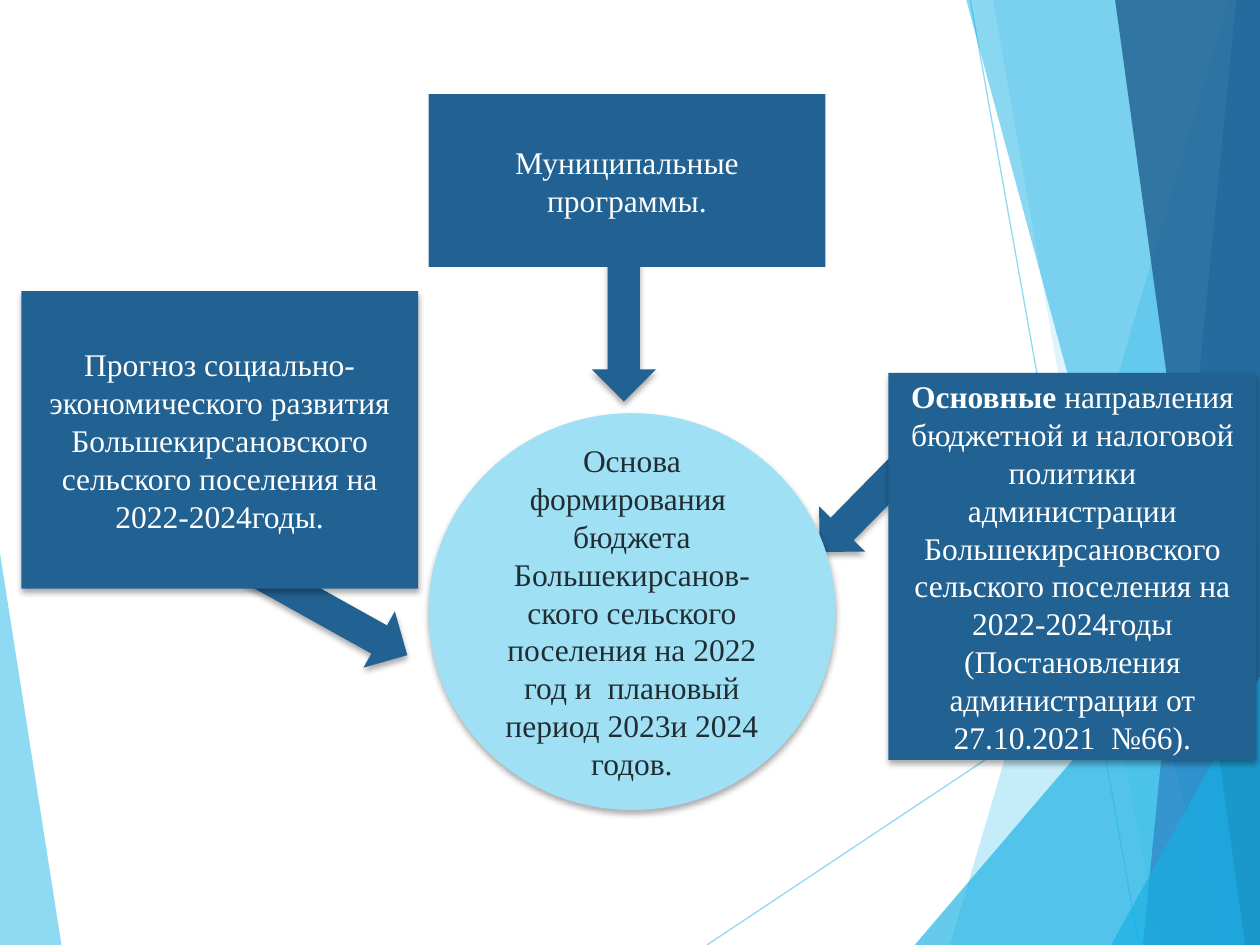
from lxml.etree import SubElement
from pptx import Presentation
from pptx.dml.color import RGBColor
from pptx.enum.shapes import MSO_CONNECTOR, MSO_SHAPE
from pptx.enum.text import MSO_ANCHOR, PP_ALIGN
from pptx.oxml.ns import qn
from pptx.util import Cm, Pt

WIDE, HIGH = 25.4, 19.05
HUES = {
    "sky": "5FCBEF", "cyan": "17B0E4", "blue": "2E83C3", "navy": "226292",
    "pale": "9FE0F5", "ink": "212D32", "white": "FFFFFF", "black": "000000",
}
FONT = {"name": "Times New Roman", "size": Pt(18)}
FRAME = {"word_wrap": True, "vertical_anchor": MSO_ANCHOR.MIDDLE}

WEDGE = ("sky", 70, [(0, 11.15), (1.24, HIGH), (0, HIGH)])
RAYS = [
    ((14.25, HIGH), (WIDE, 11.63)),
    ((19.56, 0), (22.96, HIGH)),
]
BANDS = [
    ("sky", 36, 24.77, 19.15, 0),
    ("sky", 20, 20.02, 23.34, 0),
    ("cyan", 66, WIDE, 18.44, 10.9),
    ("cyan", 50, 19.48, 24.64, 0),
    ("blue", 70, 24.92, 23.04, 0),
    ("navy", 82, 22.48, 25.1, 0),
    ("cyan", 66, WIDE, 22.4, 13.64),
]
ARROWS = [(4.83, 11.68, 29.1), (15.98, 9.19, 134.5), (10.77, 5.64, 90)]
CORE = [[("Основа формирования  бюджета Большекирсанов-ского сельского поселения "
          "на 2022 год и  плановый период 2023и 2024 годов.", False)]]
PLANS = [[("Муниципальные программы.", False)]]
POLICY = [
    [("Основные", True),
     (" направления бюджетной и налоговой политики администрации "
      "Большекирсановского сельского поселения на 2022-2024годы", False)],
    [("(Постановления администрации от 27.10.2021  №66).", False)],
]
TREND = [[("Прогноз социально-экономического развития Большекирсановского "
           "сельского поселения на 2022-2024годы.", False)]]


def apply(item, values):
    for name, value in values.items():
        setattr(item, name, value)


def tint(fill, hue):
    fill.solid()
    fill.fore_color.rgb = RGBColor.from_string(HUES[hue])


def fade(node, part):
    for color in node.iter(qn("a:srgbClr")):
        SubElement(color, qn("a:alpha"), val=str(part * 1000))


def shade(shape):
    glow = SubElement(shape.element.spPr, qn("a:effectLst"))
    drop = SubElement(glow, qn("a:outerShdw"), blurRad=str(Pt(3.5)),
                      dist=str(Pt(2.2)), dir="5400000", rotWithShape="0")
    SubElement(drop, qn("a:srgbClr"), val=HUES["black"])
    fade(drop, 32)


def add_band(slide, hue, part, points):
    spots = [(Cm(x), Cm(y)) for x, y in points]
    draft = slide.shapes.build_freeform(*spots[0])
    draft.add_line_segments(spots[1:])
    band = draft.convert_to_shape()
    band.shadow.inherit = False
    tint(band.fill, hue)
    band.line.fill.background()
    fade(band.element.spPr, part)


def add_ray(slide, start, end):
    ray = slide.shapes.add_connector(
        MSO_CONNECTOR.STRAIGHT, *map(Cm, start + end))
    ray.line.width = Pt(0.75)
    tint(ray.line.fill, "sky")
    fade(ray.element.spPr, 70)
    SubElement(ray.element.spPr, qn("a:effectLst"))


def add_form(slide, kind, area, hue, raised=True):
    form = slide.shapes.add_shape(kind, *map(Cm, area))
    tint(form.fill, hue)
    form.line.fill.background()
    if raised:
        shade(form)
    else:
        form.shadow.inherit = False
    return form


def write(form, lines, hue="white"):
    frame = form.text_frame
    apply(frame, FRAME)
    for i, line in enumerate(lines):
        para = frame.add_paragraph() if i else frame.paragraphs[0]
        para.alignment = PP_ALIGN.CENTER
        for text, bold in line:
            run = para.add_run()
            run.text = text
            apply(run.font, {**FONT, "bold": bold})
            run.font.color.rgb = RGBColor.from_string(HUES[hue])


def add_decor(slide):
    add_band(slide, *WEDGE)
    for start, end in RAYS:
        add_ray(slide, start, end)
    for hue, part, top, base, peak in BANDS:
        points = [(top, peak), (base, HIGH), (WIDE, HIGH)]
        if top < WIDE:
            points.append((WIDE, peak))
        add_band(slide, hue, part, points)


def main():
    deck = Presentation()
    apply(deck, {"slide_width": Cm(WIDE), "slide_height": Cm(HIGH)})
    slide = deck.slides.add_slide(deck.slide_layouts[6])
    add_decor(slide)
    for left, top, turn in ARROWS:
        arrow = add_form(slide, MSO_SHAPE.RIGHT_ARROW,
                         (left, top, 3.61, 1.3), "navy")
        arrow.rotation = turn
    core = add_form(slide, MSO_SHAPE.OVAL, (8.64, 8.33, 8.2, 8), "pale")
    write(core, CORE, "ink")
    for area, lines, raised in [
        ((8.64, 1.9, 8, 3.48), PLANS, False),
        ((17.91, 7.52, 7.42, 7.8), POLICY, True),
        ((0.43, 5.87, 8, 6), TREND, True),
    ]:
        write(add_form(slide, MSO_SHAPE.RECTANGLE, area, "navy", raised), lines)
    deck.save("out.pptx")


if __name__ == "__main__":
    main()
